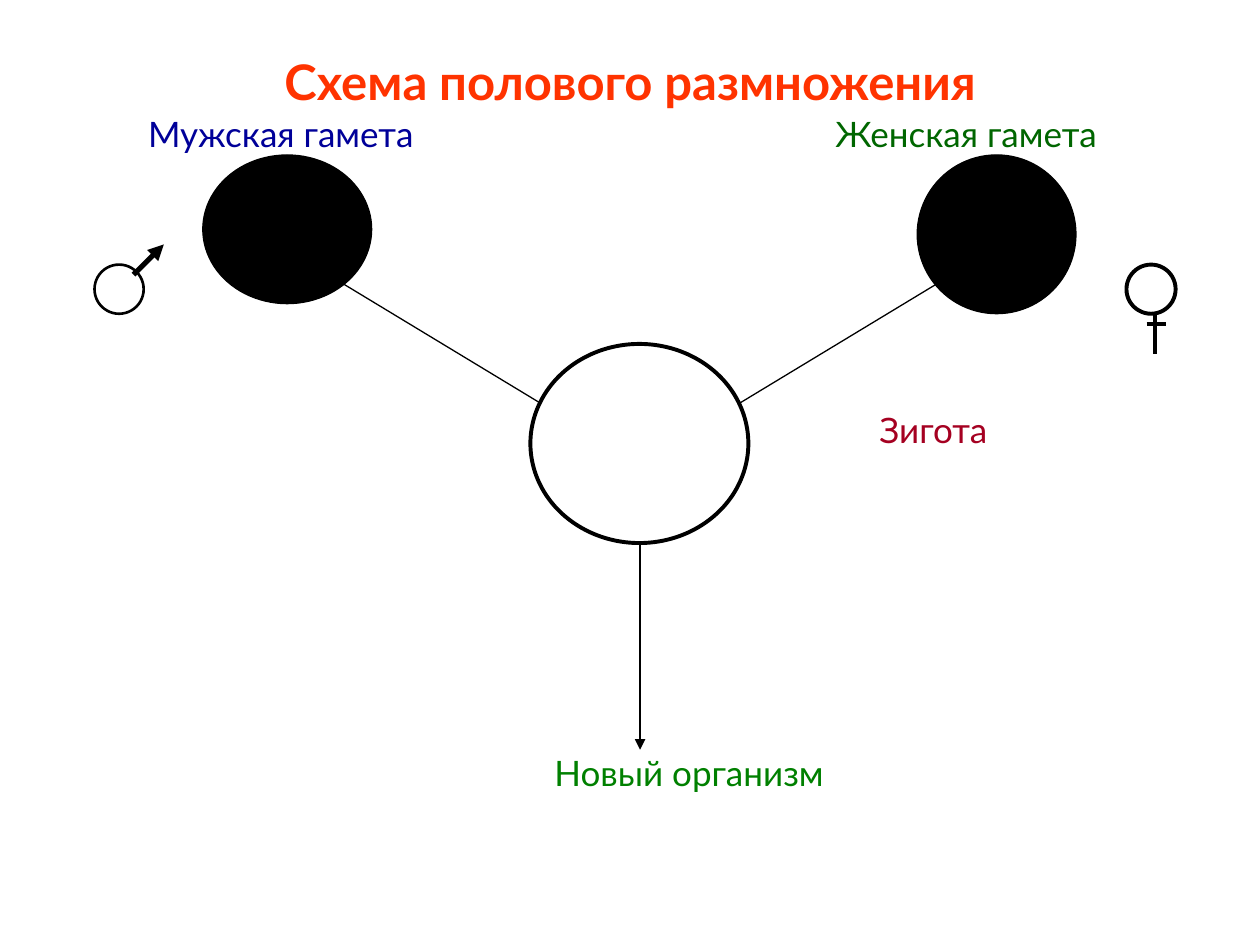
"""Build a slide with a diagram of sexual reproduction."""
from lxml.etree import SubElement
from pptx import Presentation
from pptx.dml.color import RGBColor
from pptx.enum.shapes import MSO_CONNECTOR, MSO_SHAPE
from pptx.enum.text import MSO_ANCHOR, PP_ALIGN
from pptx.oxml.ns import qn
from pptx.util import Inches, Pt

BLACK = RGBColor(0x00, 0x00, 0x00)
WHITE = RGBColor(0xFF, 0xFF, 0xFF)
ORANGE = RGBColor(0xFF, 0x33, 0x00)
BLUE = RGBColor(0x00, 0x00, 0x99)
DARK_GREEN = RGBColor(0x00, 0x66, 0x00)
GREEN = RGBColor(0x00, 0x80, 0x00)
CRIMSON = RGBColor(0xA5, 0x00, 0x21)
FONT = "Lato"
WIDTH, HEIGHT = Inches(10), Inches(7.5)

TITLE = "Схема полового размножения"
TITLE_AREA = (5, 4, 90, 9.2)
LABEL_SIZE = (24, 5)
LABELS = [
    ("Мужская гамета", 11.75, 14.1, BLUE),
    ("Женская гамета", 66.3, 14.1, DARK_GREEN),
    ("Зигота", 69.8, 45.4, CRIMSON),
    ("Новый организм", 44, 81.7, GREEN),
]
MALE_GAMETE = (16.1, 16.4, 13.4, 15.73)
FEMALE_GAMETE = (72.8, 16.4, 12.6, 16.8)
ZYGOTE = (42.1, 36.4, 17.3, 21.07)
MALE_SIGN = (7.5, 28, 3.9, 5.2)
FEMALE_SIGN = (89.4, 28, 3.9, 5.2)
ELLIPSES = [
    (MALE_GAMETE, BLACK, 0.75),
    (FEMALE_GAMETE, BLACK, 0.75),
    (ZYGOTE, WHITE, 2.25),
    (MALE_SIGN, WHITE, 1.5),
    (FEMALE_SIGN, WHITE, 2.25),
]
LINES = [
    ((10.6, 29.07), (13, 25.87), 3, True),
    ((91.7, 33.2), (91.7, 37.47), 2.25, False),
    ((91, 34.27), (92.5, 34.27), 2.25, False),
    ((50.8, 57.4), (50.8, 79.33), 1.5, True),
    ((27.2, 30), (42.9, 42.67), 0.75, False),
    ((74.4, 30), (58.7, 42.67), 0.75, False),
]


def scale(*shares):
    """Turn alternating percentages of width and height into lengths."""
    return [round(share * (HEIGHT if index % 2 else WIDTH) / 100)
            for index, share in enumerate(shares)]


def write(shape, text, size, color, align, bold=False):
    """Put one formatted run into a shape without margins."""
    frame = shape.text_frame
    frame.word_wrap = True
    frame.vertical_anchor = MSO_ANCHOR.MIDDLE
    frame.margin_left = frame.margin_right = 0
    frame.margin_top = frame.margin_bottom = 0
    paragraph = frame.paragraphs[0]
    paragraph.alignment = align
    run = paragraph.add_run()
    run.text = text
    run.font.name, run.font.size, run.font.bold = FONT, Pt(size), bold
    run.font.color.rgb = color


def add_ellipse(slide, area, fill, weight):
    """Draw one outlined ellipse."""
    shape = slide.shapes.add_shape(MSO_SHAPE.OVAL, *scale(*area))
    shape.shadow.inherit = False
    shape.fill.solid()
    shape.fill.fore_color.rgb = fill
    shape.line.color.rgb = BLACK
    shape.line.width = Pt(weight)


def add_line(slide, start, end, weight, arrow):
    """Draw one straight line, with an arrowhead where wanted."""
    connector = slide.shapes.add_connector(
        MSO_CONNECTOR.STRAIGHT, *scale(*start, *end))
    connector.line.color.rgb = BLACK
    connector.line.width = Pt(weight)
    properties = connector._element.spPr
    if arrow:
        SubElement(properties.find(qn("a:ln")), qn("a:tailEnd"), type="triangle")
    SubElement(properties, qn("a:effectLst"))


def main():
    """Compose and save the slide."""
    presentation = Presentation()
    presentation.slide_width, presentation.slide_height = WIDTH, HEIGHT
    slide = presentation.slides.add_slide(presentation.slide_layouts[5])
    title = slide.shapes.title
    title.left, title.top, title.width, title.height = scale(*TITLE_AREA)
    write(title, TITLE, 28, ORANGE, PP_ALIGN.CENTER, bold=True)
    for text, left, middle, color in LABELS:
        width, height = LABEL_SIZE
        area = scale(left, middle - height / 2, width, height)
        write(slide.shapes.add_textbox(*area), text, 20, color, PP_ALIGN.LEFT)
    for ellipse in ELLIPSES:
        add_ellipse(slide, *ellipse)
    for line in LINES:
        add_line(slide, *line)
    presentation.save("out.pptx")


if __name__ == "__main__":
    main()
